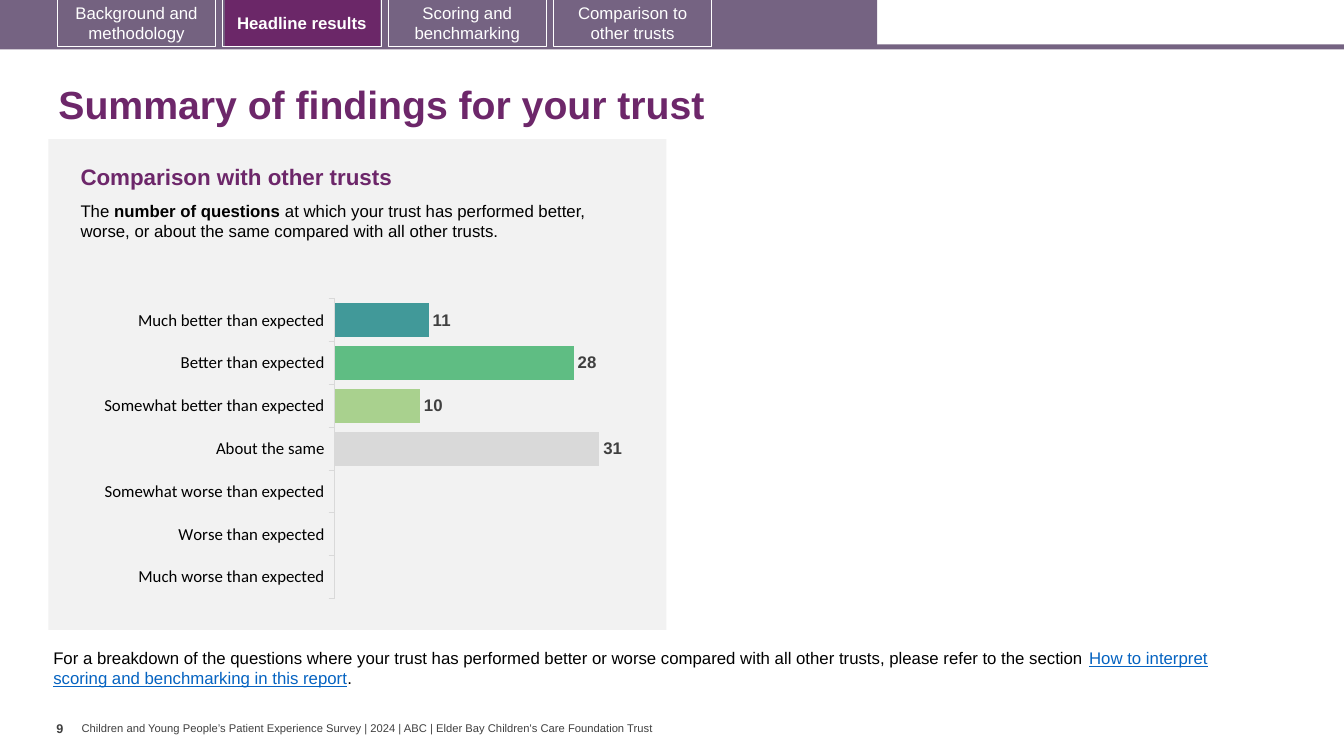
from lxml import etree
from pptx import Presentation
from pptx.chart.data import CategoryChartData
from pptx.dml.color import RGBColor
from pptx.enum import chart as ch, shapes, text
from pptx.oxml.ns import qn
from pptx.util import Inches, Pt

PURPLE, BAND, WHITE, GREY, BLACK = "6D276A", "756382", "FFFFFF", "404040", "000000"
TABS = [
    ("Background and methodology", "746280"),
    ("Headline results", None),
    ("Scoring and benchmarking", None),
    ("Comparison to other trusts", BAND),
]
RESULTS = [
    ("Much better than expected", 11, "419999"),
    ("Better than expected", 28, "5FBD83"),
    ("Somewhat better than expected", 10, "A9D18E"),
    ("About the same", 31, "D9D9D9"),
    ("Somewhat worse than expected", None, "FFD966"),
    ("Worse than expected", None, "F1BE48"),
    ("Much worse than expected", None, "E87722"),
]


def rgb(color):
    return RGBColor.from_string(color)


def set_font(font, size, color, bold=False, name="Arial"):
    font.size, font.bold, font.name = Pt(size), bold, name
    font.color.rgb = rgb(color)


def add_run(p, wording, size, color, bold=False, underline=None):
    r = p.add_run()
    r.text = wording
    set_font(r.font, size, color, bold)
    r.font.underline = underline


def add_rect(slide, box, fill=None, line=None):
    sp = slide.shapes.add_shape(shapes.MSO_SHAPE.RECTANGLE, *map(Inches, box))
    sp.shadow.inherit = False
    if fill:
        sp.fill.solid()
        sp.fill.fore_color.rgb = rgb(fill)
    else:
        sp.fill.background()
    if line:
        sp.line.color.rgb = rgb(line)
        sp.line.width = Pt(0.75)
    else:
        sp.line.fill.background()
    return sp


def add_text(slide, box, runs, wrap=True, side=0.1, top=0.05):
    """Add a text box; each run is (wording, size, color, bold, underline)."""
    tf = slide.shapes.add_textbox(*map(Inches, box)).text_frame
    tf.word_wrap = wrap
    tf.margin_left = tf.margin_right = Inches(side)
    tf.margin_top = tf.margin_bottom = Inches(top)
    for run in runs:
        add_run(tf.paragraphs[0], *run)
    return tf


def add_tabs(slide):
    add_rect(slide, (0, 0.44, 13.33, 0.05), BAND)
    add_rect(slide, (0, 0, 8.7, 0.47), BAND)
    add_rect(slide, (2.23, 0, 1.54, 0.46), "6B2768")
    for i, (label, fill) in enumerate(TABS):
        tab = add_rect(slide, (0.57 + 1.64 * i, -0.01, 1.57, 0.47), fill, WHITE)
        tf = tab.text_frame
        tf.word_wrap = True
        tf.vertical_anchor = text.MSO_ANCHOR.MIDDLE
        p = tf.paragraphs[0]
        p.alignment = text.PP_ALIGN.CENTER
        add_run(p, label, 12, WHITE, label == "Headline results")


def set_title(slide, wording):
    title = slide.shapes.title
    title.left, title.top = Inches(0.48), Inches(0.7)
    title.width, title.height = Inches(12.49), Inches(0.72)
    tf = title.text_frame
    tf.vertical_anchor = text.MSO_ANCHOR.MIDDLE
    p = tf.paragraphs[0]
    p.alignment = text.PP_ALIGN.LEFT
    p.line_spacing = 0.9
    add_run(p, wording, 28, PURPLE, True)


def place_plot(chart, x, y, w, h):
    """Fix the inner plot area as fractions of the chart."""
    area = chart._chartSpace.chart.plotArea
    for old in area.findall(qn("c:layout")):
        area.remove(old)
    layout = etree.Element(qn("c:layout"))
    manual = etree.SubElement(layout, qn("c:manualLayout"))
    settings = [("layoutTarget", "inner"), ("xMode", "edge"), ("yMode", "edge"),
                ("x", x), ("y", y), ("w", w), ("h", h)]
    for tag, val in settings:
        etree.SubElement(manual, qn("c:" + tag)).set("val", str(val))
    area.insert(0, layout)


def add_results_chart(slide, box):
    names, values, colors = zip(*RESULTS)
    data = CategoryChartData(number_format="0")
    data.categories = names
    data.add_series("Series 1", values)
    chart = slide.shapes.add_chart(
        ch.XL_CHART_TYPE.BAR_CLUSTERED, *map(Inches, box), data).chart
    chart.has_legend = chart.has_title = False
    set_font(chart.font, 10, BLACK, name="Calibri")
    place_plot(chart, 0.467, 0.072, 0.476, 0.872)

    cat = chart.category_axis
    cat.reverse_order = True
    cat.major_tick_mark = ch.XL_TICK_MARK.OUTSIDE
    cat.format.line.color.rgb = rgb("D9D9D9")
    cat.format.line.width = Pt(0.75)
    set_font(cat.tick_labels.font, 12, BLACK, name="Calibri")
    val = chart.value_axis
    val.visible = val.has_major_gridlines = False
    val.minimum_scale, val.maximum_scale = 0, 35

    plot = chart.plots[0]
    plot.gap_width = 27
    plot.vary_by_categories = False
    series = plot.series[0]
    series.format.fill.solid()
    series.format.fill.fore_color.rgb = rgb("4472C4")
    for i, color in enumerate(colors):
        fill = series.points[i].format.fill
        fill.solid()
        fill.fore_color.rgb = rgb(color)
    labels = series.data_labels
    labels.show_value = True
    labels.number_format, labels.number_format_is_linked = "0", False
    labels.position = ch.XL_LABEL_POSITION.OUTSIDE_END
    set_font(labels.font, 12, GREY, True)


def main():
    prs = Presentation()
    prs.slide_width, prs.slide_height = Inches(13.33), Inches(7.5)
    slide = prs.slides.add_slide(prs.slide_layouts[5])
    footer = add_text(slide, (0.81, 7.16, 5.76, 0.13), [
        ("Children and Young People’s Patient Experience Survey | 2024 | ABC | "
         "Elder Bay Children's Care Foundation Trust", 8, GREY)], False, 0, 0)
    footer.vertical_anchor = text.MSO_ANCHOR.MIDDLE
    add_tabs(slide)
    set_title(slide, "Summary of findings for your trust")
    add_rect(slide, (0.48, 1.38, 6.13, 4.87), "F2F2F2")
    add_text(slide, (0.7, 1.57, 5.52, 0.37),
             [("Comparison with other trusts", 16, PURPLE, True)])
    add_text(slide, (0.7, 1.94, 5.29, 0.71), [
        ("The ", 12, BLACK),
        ("number of questions ", 12, BLACK, True),
        ("at which your trust has performed better, worse, or about the same "
         "compared with all other trusts.", 12, BLACK)])
    add_text(slide, (0.43, 6.38, 12.21, 0.5), [
        ("For a breakdown of the questions where your trust has performed better or "
         "worse compared with all other trusts, please refer to the section ", 12, BLACK),
        ("How to interpret scoring and benchmarking in this report",
         12, "0563C1", False, True),
        (".", 12, BLACK)])
    add_text(slide, (0.56, 7.1, 0.25, 0.4), [("9", 9, GREY, True)], False, 0)
    add_results_chart(slide, (0.41, 2.72, 6.23, 3.41))
    prs.save("out.pptx")


if __name__ == "__main__":
    main()
